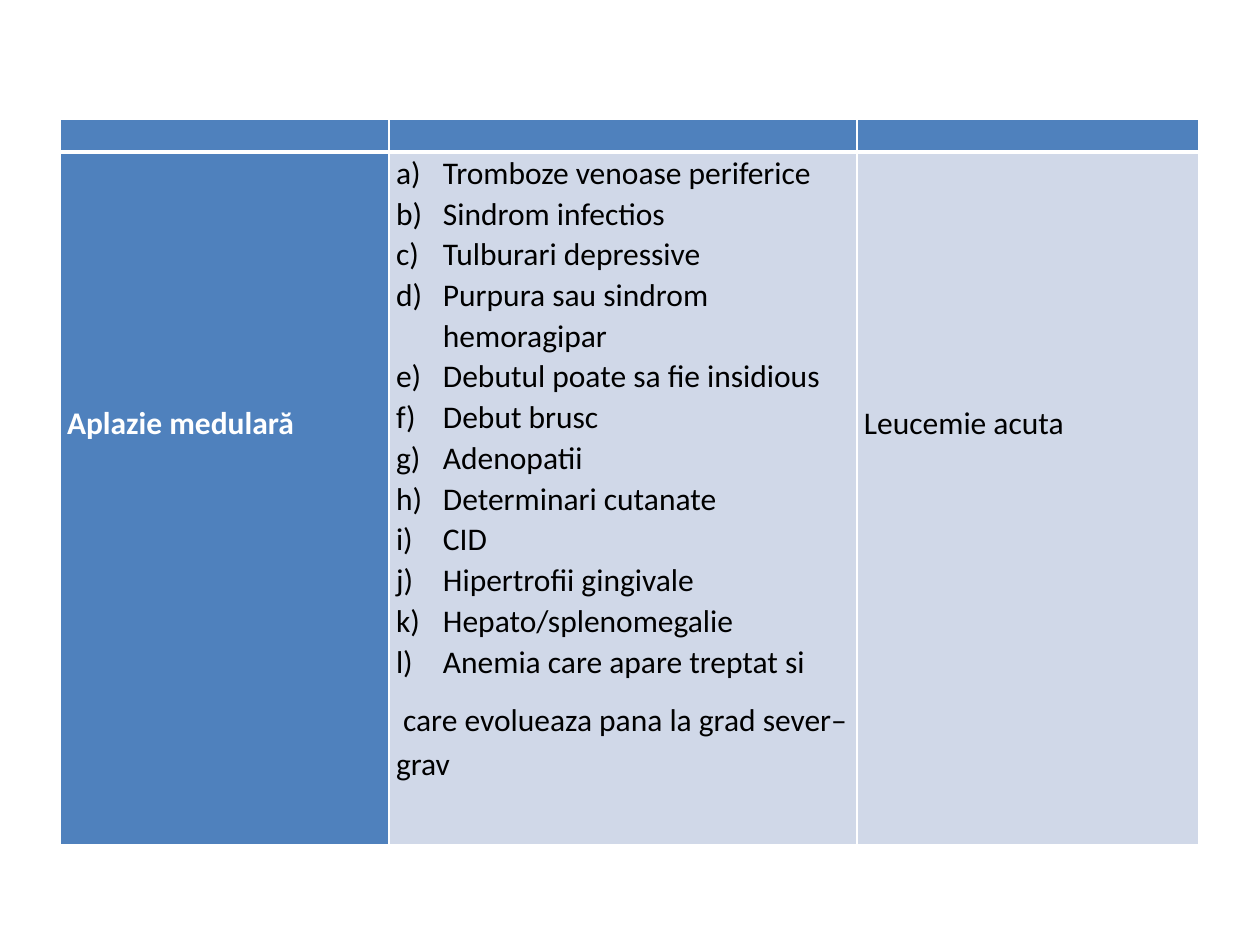
import dataclasses
import lxml.etree
import pptx
import pptx.dml.color
import pptx.oxml.ns
import pptx.util

SCALE = 914400 // 126
WHITE = pptx.dml.color.RGBColor(0xFF, 0xFF, 0xFF)
BLACK = pptx.dml.color.RGBColor(0, 0, 0)
BLUE = pptx.dml.color.RGBColor(0x4F, 0x81, 0xBD)
PALE = pptx.dml.color.RGBColor(0xD0, 0xD8, 0xE8)
FONT = "Calibri"
SIDES = ("L", "R", "T", "B")
WIDTHS = (329, 468, 342)
HEIGHTS = (33, 693)
INDENT = 47
SIGNS = (
    "Tromboze venoase periferice",
    "Sindrom infectios",
    "Tulburari depressive",
    "Purpura sau sindrom hemoragipar",
    "Debutul poate sa fie insidious",
    "Debut brusc",
    "Adenopatii",
    "Determinari cutanate",
    "CID",
    "Hipertrofii gingivale",
    "Hepato/splenomegalie",
    "Anemia care apare treptat si",
)
CLOSING = " care evolueaza pana la grad sever– grav"


@dataclasses.dataclass(frozen=True)
class Entry:
    lines: tuple[str, ...]
    fill: pptx.dml.color.RGBColor
    color: pptx.dml.color.RGBColor = BLACK
    bold: bool = False
    top: int = 0
    listed: int = 0


HEAD = Entry((), BLUE)
ROWS = (
    (HEAD, HEAD, HEAD),
    (
        Entry(("Aplazie medulară",), BLUE, WHITE, True, top=247),
        Entry((*SIGNS, CLOSING), PALE, listed=len(SIGNS)),
        Entry(("Leucemie acuta",), PALE, top=247),
    ),
)


def px(count: int) -> int:
    return pptx.util.Emu(count * SCALE)


def add(parent, tag: str, **attrs: str):
    """Append a DrawingML element to parent."""
    return lxml.etree.SubElement(parent, pptx.oxml.ns.qn(tag), attrs)


def border(cell, thick: str) -> None:
    """Rule the cell in white, with a 3 pt line on its thick side."""
    props = cell._tc.get_or_add_tcPr()
    for side in SIDES:
        width = pptx.util.Pt(3 if side == thick else 1)
        line = add(props, f"a:ln{side}", w=str(int(width)))
        add(add(line, "a:solidFill"), "a:srgbClr", val=str(WHITE))


def letter(para) -> None:
    """Number the paragraph a), b), c) with a hanging indent."""
    props = para._p.get_or_add_pPr()
    props.set("marL", str(px(INDENT)))
    props.set("indent", str(-px(INDENT)))
    add(props, "a:buFont", typeface="+mj-lt")
    add(props, "a:buAutoNum", type="alphaLcParenR")


def write(cell, entry: Entry) -> None:
    frame = cell.text_frame
    if not entry.lines:
        add(frame.paragraphs[0]._p, "a:endParaRPr", sz="1100")
        return
    frame.text = "\n".join(entry.lines)
    for spot, para in enumerate(frame.paragraphs, 1):
        listed = spot <= entry.listed
        para.line_spacing = 1.06 if listed else 1.15
        after = 10 if not listed else 8 if spot == entry.listed else 0
        para.space_after = pptx.util.Pt(after)
        if listed:
            letter(para)
        font = para.runs[0].font
        font.name, font.size = FONT, pptx.util.Pt(18)
        font.bold, font.color.rgb = entry.bold, entry.color


def draw(cell, entry: Entry, thick: str) -> None:
    cell.margin_left = cell.margin_right = px(7)
    cell.margin_top, cell.margin_bottom = px(entry.top), 0
    border(cell, thick)
    cell.fill.solid()
    cell.fill.fore_color.rgb = entry.fill
    write(cell, entry)


def main() -> None:
    deck = pptx.Presentation()
    deck.slide_width, deck.slide_height = px(1260), px(945)
    slide = deck.slides.add_slide(deck.slide_layouts[6])
    table = slide.shapes.add_table(
        len(HEIGHTS), len(WIDTHS), px(60), px(119),
        px(sum(WIDTHS)), px(sum(HEIGHTS)),
    ).table
    table.first_row = table.horz_banding = False
    for column, width in zip(table.columns, WIDTHS):
        column.width = px(width)
    for row, height in zip(table.rows, HEIGHTS):
        row.height = px(height)
    for row, entries, thick in zip(table.rows, ROWS, ("B", "T")):
        for cell, entry in zip(row.cells, entries):
            draw(cell, entry, thick)
    deck.save("out.pptx")


if __name__ == "__main__":
    main()
